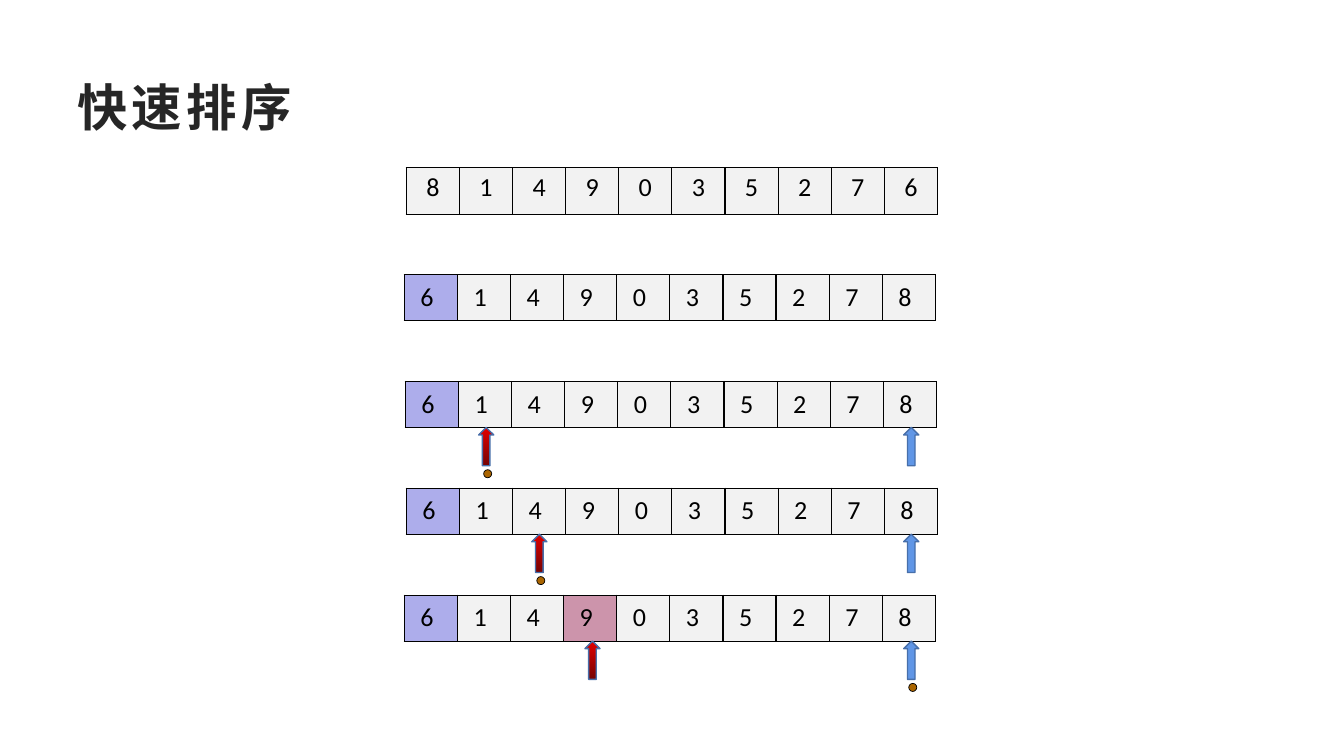
from dataclasses import dataclass
from typing import Optional

from lxml.etree import SubElement
from pptx import Presentation
from pptx.dml.color import RGBColor
from pptx.enum.shapes import MSO_SHAPE as Shape
from pptx.enum.text import MSO_ANCHOR as Anchor, PP_ALIGN as Align
from pptx.oxml.ns import qn
from pptx.slide import Slide
from pptx.util import Inches, Pt

COLORS = {
    "title": "262626", "black": "000000", "cell": "F2F2F2",
    "pivot": "ADADEB", "found": "CC94AB", "right": "6096E6",
    "left_top": "E30000", "left_bottom": "760303",
    "arrow_line": "476FAA", "dot": "AA6500",
}
COUNT = 10
ROW_WIDTH = 5.27
CELL_WIDTH = ROW_WIDTH / COUNT
CELL_HEIGHT = 0.46
FIRST_TOP = 1.66
ROW_PITCH = 1.06
ARROW_BASE = 4.22
ARROW_WIDTH, ARROW_HEIGHT = 0.15, 0.38
DOT_SIZE = 0.08
BORDERS = {"a:lnL": 1, "a:lnR": 1, "a:lnT": 0.25, "a:lnB": 0.25}


@dataclass
class Step:
    left: float
    digits: str
    left_index: Optional[int] = None
    right_index: Optional[int] = None
    moving: Optional[int] = None
    found: Optional[int] = None
    has_pivot: bool = True


STEPS = [
    Step(4.03, "8149035276", has_pivot=False),
    Step(4.01, "6149035278"),
    Step(4.02, "6149035278", left_index=1, right_index=9, moving=1),
    Step(4.03, "6149035278", left_index=2, right_index=9, moving=2),
    Step(4.01, "6149035278", left_index=3, right_index=9, moving=9, found=3),
]


def rgb(name: str) -> RGBColor:
    return RGBColor.from_string(COLORS[name])


def add_borders(cell) -> None:
    properties = cell._tc.get_or_add_tcPr()
    for tag, width in BORDERS.items():
        border = SubElement(properties, qn(tag), w=str(Pt(width)))
        fill = SubElement(border, qn("a:solidFill"))
        SubElement(fill, qn("a:srgbClr"), val=COLORS["black"])


def fill_cell(cell, step: Step, index: int) -> None:
    add_borders(cell)
    color = "cell"
    if step.has_pivot and index == 0:
        color = "pivot"
    elif index == step.found:
        color = "found"
    cell.fill.solid()
    cell.fill.fore_color.rgb = rgb(color)
    cell.margin_left = Inches(0.16 if step.has_pivot else 0)
    cell.margin_right = cell.margin_top = cell.margin_bottom = 0
    cell.vertical_anchor = Anchor.MIDDLE if step.has_pivot else Anchor.TOP
    cell.text_frame.text = step.digits[index]
    digit = cell.text_frame.paragraphs[0]
    digit.alignment = Align.LEFT if step.has_pivot else Align.CENTER
    digit.line_spacing = 1.0 if step.has_pivot else 1.15
    font = digit.runs[0].font
    font.name, font.size = "Calibri", Pt(18.6)
    font.color.rgb = rgb("black")


def add_array(slide: Slide, step: Step, top: float) -> None:
    array = slide.shapes.add_table(
        1, COUNT, Inches(step.left), Inches(top),
        Inches(ROW_WIDTH), Inches(CELL_HEIGHT)).table
    array.first_row = array.horz_banding = False
    for index, column in enumerate(array.columns):
        column.width = Inches(CELL_WIDTH)
        fill_cell(array.cell(0, index), step, index)


def arrow_left(index: int) -> float:
    return ARROW_BASE + index * CELL_WIDTH


def add_arrow(slide: Slide, index: int, top: float, is_left: bool) -> None:
    arrow = slide.shapes.add_shape(
        Shape.UP_ARROW, Inches(arrow_left(index)), Inches(top),
        Inches(ARROW_WIDTH), Inches(ARROW_HEIGHT))
    arrow.shadow.inherit = False
    arrow.line.color.rgb = rgb("arrow_line")
    arrow.line.width = Pt(1)
    if is_left:
        arrow.fill.gradient()
        arrow.fill.gradient_angle = 270
        for stop, name in zip(arrow.fill.gradient_stops, ("left_top", "left_bottom")):
            stop.color.rgb = rgb(name)
    else:
        arrow.fill.solid()
        arrow.fill.fore_color.rgb = rgb("right")


def add_dot(slide: Slide, index: int, top: float) -> None:
    dot = slide.shapes.add_shape(
        Shape.OVAL, Inches(arrow_left(index) + 0.05), Inches(top),
        Inches(DOT_SIZE), Inches(DOT_SIZE))
    dot.shadow.inherit = False
    dot.fill.solid()
    dot.fill.fore_color.rgb = rgb("dot")
    dot.line.color.rgb = rgb("black")
    dot.line.width = Pt(0.5)


def add_title(slide: Slide) -> None:
    frame = slide.shapes.add_textbox(
        Inches(0.67), Inches(0.67), Inches(5.3), Inches(0.77)).text_frame
    frame.word_wrap = True
    frame.vertical_anchor = Anchor.MIDDLE
    frame.text = "快速排序"
    heading = frame.paragraphs[0].runs[0]
    heading.font.name, heading.font.size = "Arial", Pt(36)
    heading.font.bold = True
    heading.font.color.rgb = rgb("title")
    heading.font._element.set("spc", "300")


def main() -> None:
    deck = Presentation()
    deck.slide_width, deck.slide_height = Inches(13.33), Inches(7.5)
    slide = deck.slides.add_slide(deck.slide_layouts[6])
    add_title(slide)
    for number, step in enumerate(STEPS):
        top = FIRST_TOP + number * ROW_PITCH
        add_array(slide, step, top)
        arrow_top = top + CELL_HEIGHT
        if step.right_index is not None:
            add_arrow(slide, step.right_index, arrow_top, is_left=False)
        if step.left_index is not None:
            add_arrow(slide, step.left_index, arrow_top, is_left=True)
        if step.moving is not None:
            add_dot(slide, step.moving, arrow_top + ARROW_HEIGHT + 0.04)
    deck.save("out.pptx")


if __name__ == "__main__":
    main()
